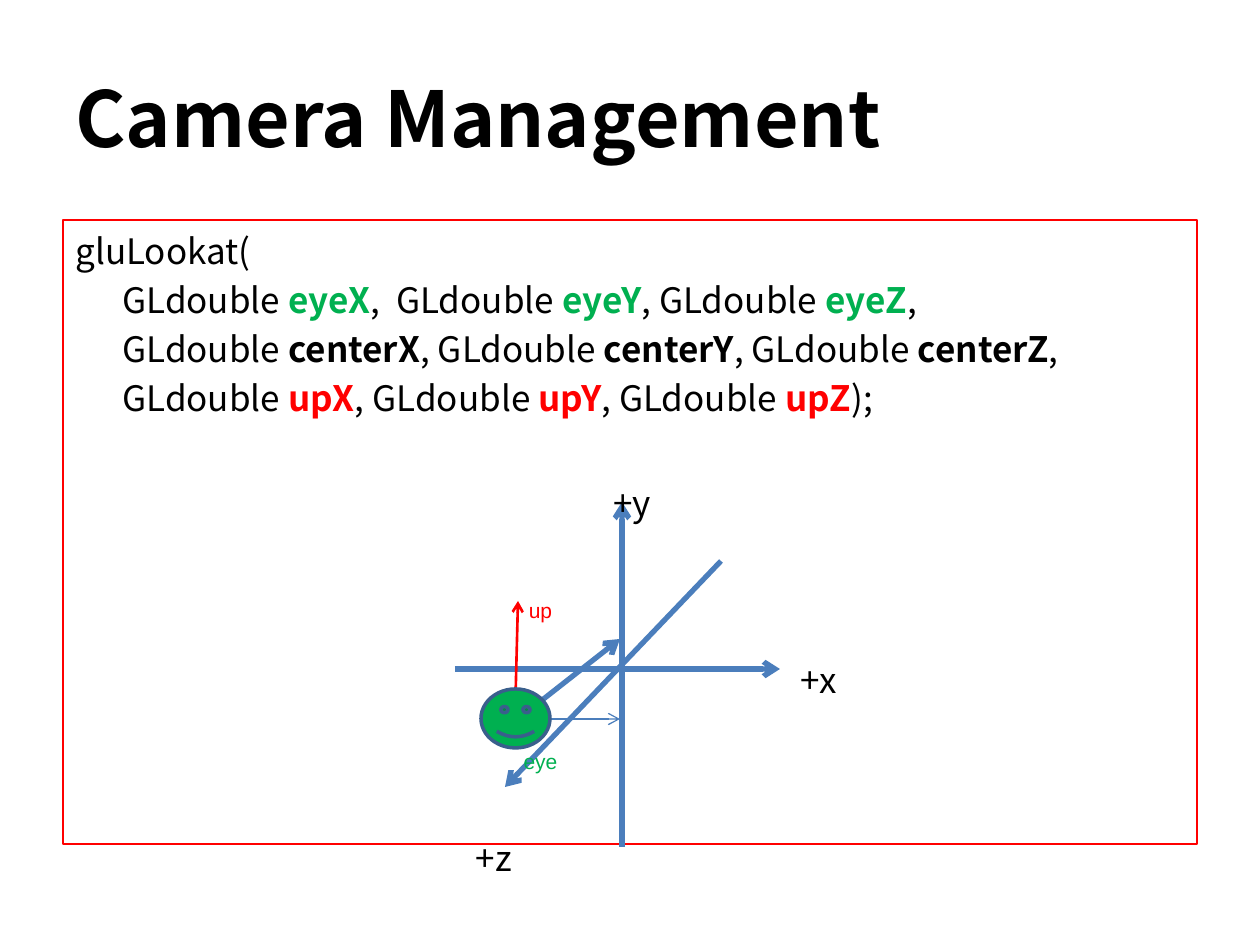
from dataclasses import dataclass

from pptx import Presentation
from pptx import util as u
from pptx.dml.color import RGBColor
from pptx.enum import shapes as s, text as t
from pptx.oxml import parse_xml
from pptx.oxml.ns import nsdecls, qn

HUES = {"ink": "000000", "red": "FF0000", "green": "00B050",
        "blue": "4B7EBC", "navy": "3A5F8C"}
SANS = "Noto Sans CJK SC"


@dataclass
class Arrow:
    x1: int
    y1: int
    x2: int
    y2: int
    hue: str = "blue"
    wide: float = 3


@dataclass
class Label:
    word: str
    x: int
    y: int
    w: int = 78
    h: int = 55
    size: int = 20
    hue: str = "ink"
    font: str = SANS


AXES = [
    Arrow(455, 669, 780, 669),
    Arrow(622, 847, 622, 502),
    Arrow(721, 561, 505, 787),
]
VIEW = [
    Arrow(518, 719, 620, 639),
    Arrow(515, 719, 518, 601, "red", 1.5),
    Arrow(518, 719, 620, 719, wide=0.75),
]
NAMES = [
    Label("+x", 780, 649),
    Label("+y", 593, 472),
    Label("+z", 455, 827),
]
TAGS = [
    Label("up", 511, 591, 59, 38, 12, "red", "Arial"),
    Label("eye", 511, 742, 59, 38, 12, "green", "Arial"),
]
ARGS = [("eye", "green", ",  ", ","), ("center", "ink", ", ", ","),
        ("up", "red", ", ", ");")]


def px(n: int) -> u.Emu:
    return u.Emu(round(n * 914400 / 126))


def rgb(hue: str) -> RGBColor:
    return RGBColor.from_string(HUES[hue])


def add_run(para, word: str, size: int, hue: str = "ink",
            bold: bool = False, font: str = SANS):
    run = para.add_run()
    run.text = word
    run.font.size = u.Pt(size)
    run.font.bold = bold
    run.font.name = font
    run.font.color.rgb = rgb(hue)
    props = run.font._element
    props.append(parse_xml(f'<a:ea {nsdecls("a")} typeface="{font}"/>'))
    return run


def add_box(slide, x: int, y: int, w: int, h: int):
    return slide.shapes.add_textbox(px(x), px(y), px(w), px(h))


def add_title(slide) -> None:
    frame = add_box(slide, 63, 38, 905, 157).text_frame
    frame.word_wrap = True
    frame.vertical_anchor = t.MSO_ANCHOR.MIDDLE
    run = add_run(frame.paragraphs[0], "Camera Management", 44, bold=True)
    glow = parse_xml(
        f'<a:effectLst {nsdecls("a")}><a:outerShdw blurRad="38100" '
        'dist="38100" dir="2700000" algn="tl"><a:srgbClr val="000000">'
        '<a:alpha val="43000"/></a:srgbClr></a:outerShdw></a:effectLst>')
    run.font._element.find(qn("a:solidFill")).addnext(glow)


def add_code(slide) -> None:
    box = add_box(slide, 63, 220, 1134, 624)
    box.line.color.rgb = rgb("red")
    box.line.width = u.Pt(0.75)
    frame = box.text_frame
    frame.word_wrap = True
    para = frame.paragraphs[0]
    para.line_spacing = u.Pt(26)
    add_run(para, "gluLookat(", 20)
    for stem, hue, gap, end in ARGS:
        para = frame.add_paragraph()
        para.line_spacing = u.Pt(26)
        para.space_before = u.Pt(2)
        para._p.get_or_add_pPr().set("marL", str(px(47)))
        for lead, axis in zip(("", gap, ", "), "XYZ"):
            add_run(para, f"{lead}GLdouble ", 20)
            add_run(para, stem + axis, 20, hue, True)
        add_run(para, end, 20)


def add_arrow(slide, arrow: Arrow) -> None:
    line = slide.shapes.add_connector(
        s.MSO_CONNECTOR.STRAIGHT, px(arrow.x1), px(arrow.y1),
        px(arrow.x2), px(arrow.y2))
    line.line.color.rgb = rgb(arrow.hue)
    line.line.width = u.Pt(arrow.wide)
    line.line._get_or_add_ln().append(
        parse_xml(f'<a:tailEnd {nsdecls("a")} type="arrow"/>'))
    line._element.spPr.append(parse_xml(f'<a:effectLst {nsdecls("a")}/>'))


def add_label(slide, label: Label) -> None:
    frame = add_box(slide, label.x, label.y, label.w, label.h).text_frame
    frame.word_wrap = False
    para = frame.paragraphs[0]
    para.alignment = t.PP_ALIGN.CENTER
    if label.font == SANS:
        para.line_spacing = u.Pt(26)
    add_run(para, label.word, label.size, label.hue, font=label.font)


def add_eye(slide) -> None:
    face = slide.shapes.add_shape(
        s.MSO_SHAPE.SMILEY_FACE, px(481), px(689), px(69), px(59))
    face.shadow.inherit = False
    face.fill.solid()
    face.fill.fore_color.rgb = rgb("green")
    face.line.color.rgb = rgb("navy")
    face.line.width = u.Pt(2)


def main() -> None:
    deck = Presentation()
    deck.slide_width, deck.slide_height = px(1260), px(945)
    slide = deck.slides.add_slide(deck.slide_layouts[6])
    add_title(slide)
    add_code(slide)
    for arrow in AXES:
        add_arrow(slide, arrow)
    for label in NAMES:
        add_label(slide, label)
    for arrow in VIEW:
        add_arrow(slide, arrow)
    add_eye(slide)
    for label in TAGS:
        add_label(slide, label)
    deck.save("out.pptx")


if __name__ == "__main__":
    main()
